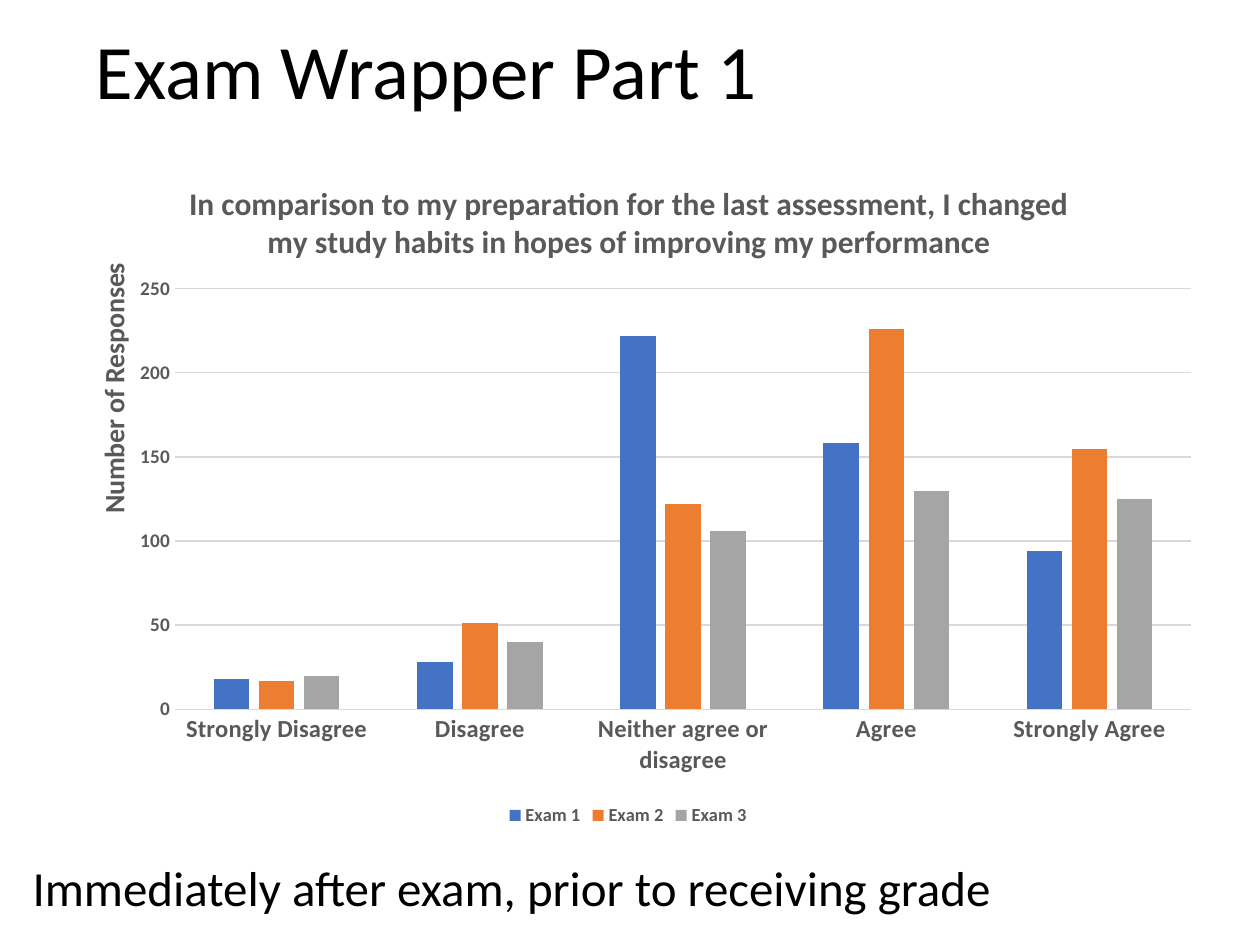
import pptx
import pptx.chart.data
import pptx.dml.color
import pptx.enum.chart
import pptx.enum.text
import pptx.oxml
import pptx.oxml.ns
import pptx.util
from pptx.util import Pt

RGBColor = pptx.dml.color.RGBColor
BLACK = RGBColor(0x00, 0x00, 0x00)
TEXT_GRAY = RGBColor(0x59, 0x59, 0x59)
GRID_GRAY = RGBColor(0xD9, 0xD9, 0xD9)
FONT = "Calibri"

ANSWERS = ["Strongly Disagree", "Disagree", "Neither agree or disagree",
           "Agree", "Strongly Agree"]
EXAMS = [
    ("Exam 1", (18, 28, 222, 158, 94), RGBColor(0x44, 0x72, 0xC4)),
    ("Exam 2", (17, 51, 122, 226, 155), RGBColor(0xED, 0x7D, 0x31)),
    ("Exam 3", (20, 40, 106, 130, 125), RGBColor(0xA5, 0xA5, 0xA5)),
]
QUESTION = ("In comparison to my preparation for the last assessment, I changed "
            "my study habits in hopes of improving my performance")


def style_font(font, size, color=TEXT_GRAY, bold=True):
    font.name = FONT
    font.size = Pt(size)
    font.bold = bold
    font.color.rgb = color


def style_line(line):
    line.color.rgb = GRID_GRAY
    line.width = Pt(0.75)


def add_text(slide, box, text, size, line_spacing, anchor):
    frame = slide.shapes.add_textbox(*map(Pt, box)).text_frame
    frame.word_wrap = True
    frame.vertical_anchor = anchor
    paragraph = frame.paragraphs[0]
    paragraph.line_spacing = line_spacing
    run = paragraph.add_run()
    run.text = text
    style_font(run.font, size, BLACK, False)


def set_chart_title(title, text, size):
    run = title.text_frame.paragraphs[0].add_run()
    run.text = text
    style_font(run.font, size)


def set_layout(parent, **fractions):
    """Place a chart part by fractions of the chart: x, y and optionally w, h."""
    for old in parent.findall(pptx.oxml.ns.qn("c:layout")):
        parent.remove(old)
    target = '<c:layoutTarget val="inner"/>' if "w" in fractions else ""
    modes = "".join(f'<c:{key}Mode val="edge"/>' for key in "xy")
    values = "".join(f'<c:{key} val="{value}"/>' for key, value in fractions.items())
    layout = pptx.oxml.parse_xml(
        f'<c:layout {pptx.oxml.ns.nsdecls("c")}><c:manualLayout>'
        f'{target}{modes}{values}</c:manualLayout></c:layout>')
    text = parent.find(pptx.oxml.ns.qn("c:tx"))
    parent.insert(0 if text is None else 1, layout)


def style_axes(chart):
    answers, responses = chart.category_axis, chart.value_axis
    for axis, size in ((answers, 14), (responses, 11)):
        axis.major_tick_mark = pptx.enum.chart.XL_TICK_MARK.NONE
        axis.minor_tick_mark = pptx.enum.chart.XL_TICK_MARK.NONE
        style_font(axis.tick_labels.font, size)
    style_line(answers.format.line)
    responses.format.line.fill.background()
    responses.minimum_scale, responses.maximum_scale = 0, 250
    responses.major_unit = 50
    style_line(responses.major_gridlines.format.line)
    set_chart_title(responses.axis_title, "Number of Responses", 16)
    set_layout(responses.axis_title._element, x=0.04, y=0.16)


def add_responses_chart(slide, box):
    chart_data = pptx.chart.data.CategoryChartData()
    chart_data.categories = ANSWERS
    for name, counts, _ in EXAMS:
        chart_data.add_series(name, counts)
    chart = slide.shapes.add_chart(
        pptx.enum.chart.XL_CHART_TYPE.COLUMN_CLUSTERED,
        *map(Pt, box), chart_data).chart
    style_font(chart.font, 10, BLACK, False)

    chart.has_title = True
    set_chart_title(chart.chart_title, QUESTION, 18)
    chart.chart_title.include_in_layout = False
    set_layout(chart.chart_title._element, x=0.12, y=0.04)
    style_axes(chart)

    plot = chart.plots[0]
    plot.gap_width = 219
    plot.overlap = -27
    plot.vary_by_categories = False
    for series, (_, _, color) in zip(plot.series, EXAMS):
        series.format.fill.solid()
        series.format.fill.fore_color.rgb = color
    plot_area = chart._chartSpace.chart.plotArea
    set_layout(plot_area, x=0.113, y=0.205, w=0.868, h=0.616)

    chart.has_legend = True
    chart.legend.position = pptx.enum.chart.XL_LEGEND_POSITION.BOTTOM
    chart.legend.include_in_layout = False
    style_font(chart.legend.font, 10.5)


def main():
    presentation = pptx.Presentation()
    presentation.slide_width, presentation.slide_height = Pt(720), Pt(540)
    slide = presentation.slides.add_slide(presentation.slide_layouts[6])
    anchors = pptx.enum.text.MSO_ANCHOR
    add_text(slide, (47.5, 14.4, 620.6, 56.2), "Exam Wrapper Part 1",
             44, 0.9, anchors.MIDDLE)
    add_text(slide, (11.5, 493.2, 620.6, 34.6),
             "Immediately after exam, prior to receiving grade",
             28, 0.8, anchors.TOP)
    add_responses_chart(slide, (24.5, 85, 668.9, 390.2))
    presentation.save("out.pptx")


if __name__ == "__main__":
    main()
